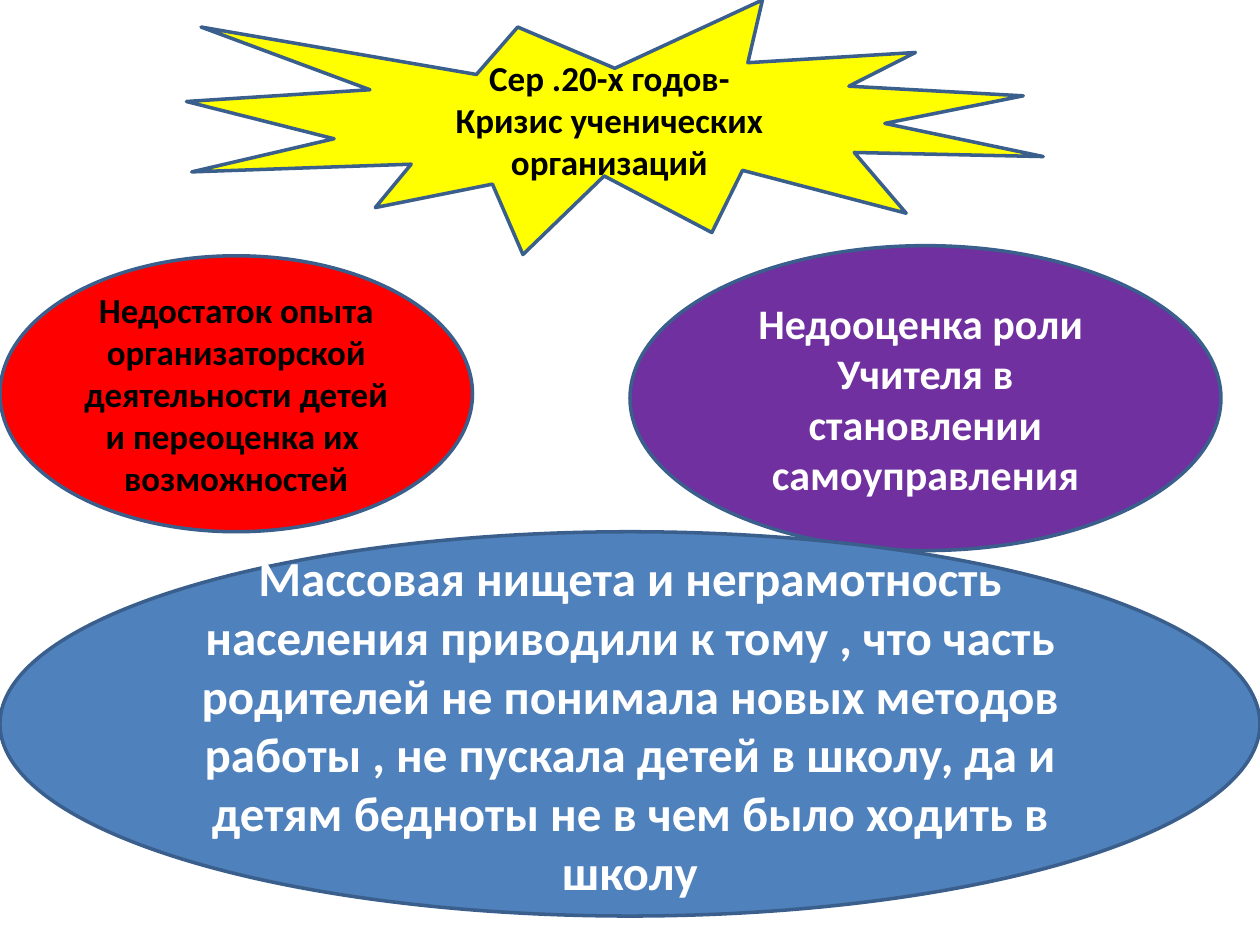
from pptx import Presentation
from pptx.dml.color import RGBColor
from pptx.enum.shapes import MSO_SHAPE
from pptx.enum.text import MSO_ANCHOR, PP_ALIGN
from pptx.util import Inches, Pt

BLACK = RGBColor(0x00, 0x00, 0x00)
WHITE = RGBColor(0xFF, 0xFF, 0xFF)
YELLOW = RGBColor(0xFF, 0xFF, 0x00)
RED = RGBColor(0xFF, 0x00, 0x00)
PURPLE = RGBColor(0x70, 0x30, 0xA0)
BLUE = RGBColor(0x4F, 0x81, 0xBD)
OUTLINE = RGBColor(0x3A, 0x5F, 0x8C)

CRISIS = ["Сер .20-х годов-", "Кризис ученических организаций"]
CAUSES = [
    {
        "box": (0, 2.03, 3.75, 2.19),
        "fill": RED,
        "color": BLACK,
        "size": 20,
        "lines": [
            "Недостаток опыта организаторской деятельности детей",
            "и переоценка их ",
            "возможностей",
        ],
    },
    {
        "box": (5, 1.95, 4.69, 2.42),
        "fill": PURPLE,
        "color": WHITE,
        "size": 24,
        "lines": ["Недооценка роли ", "Учителя в становлении самоуправления"],
    },
    {
        "box": (0, 4.22, 10, 3.05),
        "fill": BLUE,
        "color": WHITE,
        "size": 28,
        "lines": [
            "Массовая нищета и неграмотность населения приводили к тому , "
            "что часть родителей не понимала новых методов работы , "
            "не пускала детей в школу, да и детям бедноты "
            "не в чем было ходить в школу"
        ],
    },
]


def add_text(shape, lines, size, color):
    text_frame = shape.text_frame
    text_frame.word_wrap = True
    text_frame.vertical_anchor = MSO_ANCHOR.MIDDLE
    text_frame.text = "\n".join(lines)
    font_format = {"name": "Calibri", "size": Pt(size), "bold": True}
    for paragraph in text_frame.paragraphs:
        paragraph.alignment = PP_ALIGN.CENTER
        for run in paragraph.runs:
            for attribute, value in font_format.items():
                setattr(run.font, attribute, value)
            run.font.color.rgb = color


def add_figure(slide, kind, box, fill, color, size, lines):
    shape = slide.shapes.add_shape(kind, *(Inches(length) for length in box))
    shape.shadow.inherit = False
    shape.fill.solid()
    shape.fill.fore_color.rgb = fill
    shape.line.color.rgb = OUTLINE
    shape.line.width = Pt(2)
    add_text(shape, lines, size, color)


def add_crisis(slide, box):
    add_figure(slide, MSO_SHAPE.EXPLOSION1, box, YELLOW, BLACK, 20, CRISIS)


def add_cause(slide, box, fill, color, size, lines):
    add_figure(slide, MSO_SHAPE.OVAL, box, fill, color, size, lines)


def main():
    presentation = Presentation()
    presentation.slide_width = Inches(10)
    presentation.slide_height = Inches(7.5)
    slide = presentation.slides.add_slide(presentation.slide_layouts[6])
    add_crisis(slide, (1.48, 0, 6.8, 2.02))
    for cause in CAUSES:
        add_cause(slide, **cause)
    presentation.save("out.pptx")


if __name__ == "__main__":
    main()
